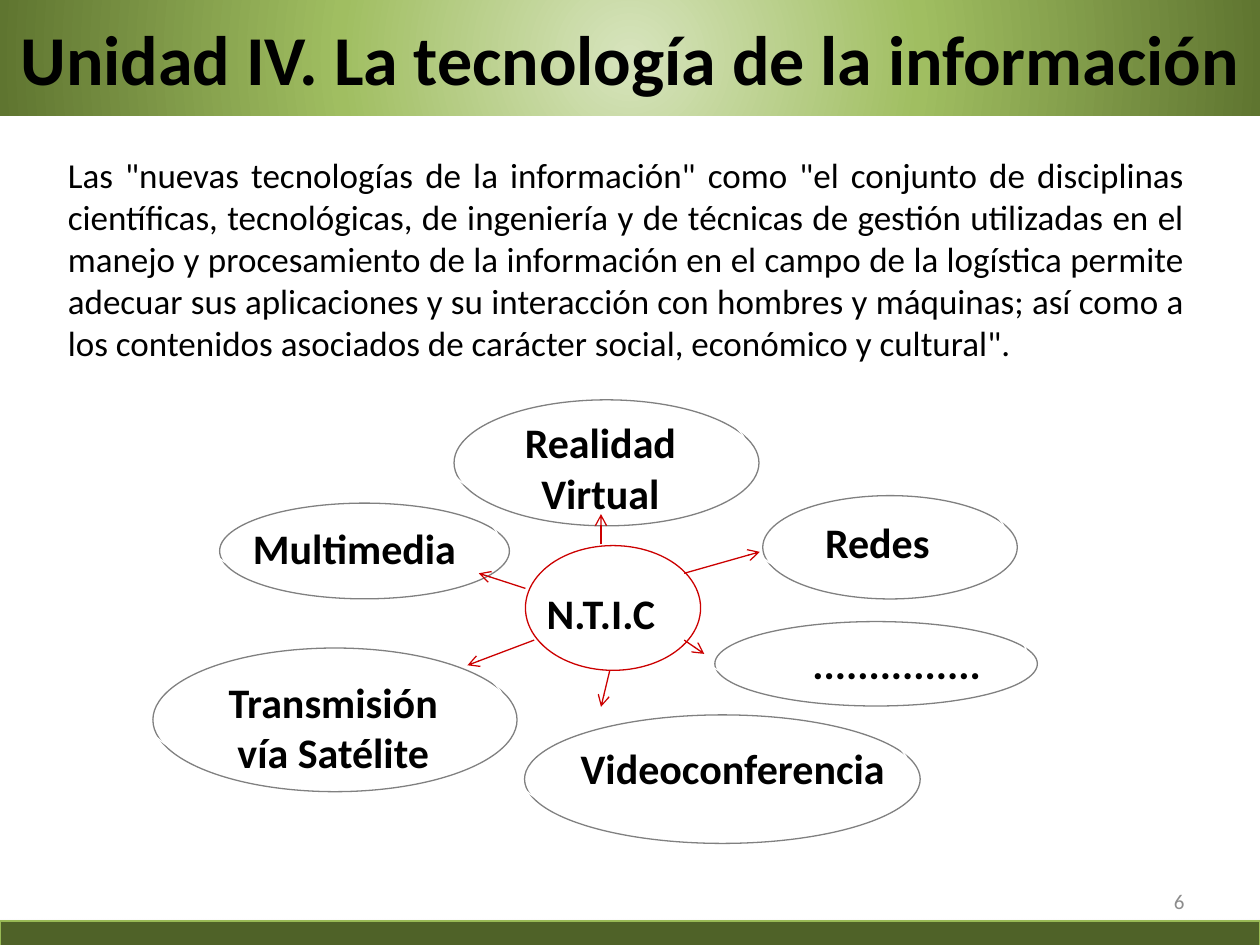
from pptx import Presentation
from pptx.dml.color import RGBColor
from pptx.enum.shapes import MSO_CONNECTOR, MSO_SHAPE
from pptx.enum.text import MSO_ANCHOR, MSO_AUTO_SIZE, PP_ALIGN
from pptx.oxml import parse_xml
from pptx.oxml.ns import nsdecls
from pptx.util import Inches, Pt

LEFT, MID, RIGHT, FULL = PP_ALIGN.LEFT, PP_ALIGN.CENTER, PP_ALIGN.RIGHT, PP_ALIGN.JUSTIFY
TOP, MIDDLE = MSO_ANCHOR.TOP, MSO_ANCHOR.MIDDLE
OVAL, RECT = MSO_SHAPE.OVAL, MSO_SHAPE.RECTANGLE
STRAIGHT = MSO_CONNECTOR.STRAIGHT

THEME = {
    "font": "Calibri", "ink": "000000", "page": "8C8C8C", "red": "CC0000",
    "white": "FFFFFF", "bar": "4F6228", "edge": "98B955", "line": 0.75,
    "title": 40, "body": 20, "label": 24, "small": 12,
    "fade": [(0, "D7E4BD"), (46, "A0BE61"), (100, "5F7530")],
}

# Grid of 100 columns by 75 rows
prs = Presentation()
prs.slide_width, prs.slide_height = Inches(10), Inches(7.5)
COL, ROW = prs.slide_width / 100, prs.slide_height / 75
slide = prs.slides.add_slide(prs.slide_layouts[5])
shapes = slide.shapes


def place(x, y, w, h):
    return round(x * COL), round(y * ROW), round(w * COL), round(h * ROW)


def write(shape, text, size, align=LEFT, anchor=TOP, bold=False, color="ink"):
    frame = shape.text_frame
    frame.word_wrap = True
    frame.auto_size = MSO_AUTO_SIZE.NONE
    frame.vertical_anchor = anchor
    para = frame.paragraphs[0]
    para.alignment = align
    run = para.add_run()
    run.text = text
    run.font.name = THEME["font"]
    run.font.size = Pt(THEME[size])
    run.font.bold = bold
    run.font.color.rgb = RGBColor.from_string(THEME[color])


# Title band with a radial fade
title = shapes.title
title.left, title.top, title.width, title.height = place(0, -0.1, 100, 9.3)
stops = "".join(
    f'<a:gs pos="{pos * 1000}"><a:srgbClr val="{tint}"/></a:gs>'
    for pos, tint in THEME["fade"])
title.element.spPr.append(parse_xml(
    f'<a:gradFill {nsdecls("a")} rotWithShape="1"><a:gsLst>{stops}</a:gsLst>'
    '<a:path path="circle"><a:fillToRect l="50000" t="50000" r="50000" b="50000"/>'
    '</a:path></a:gradFill>'))
write(title, "Unidad IV. La tecnología de la información", "title", MID, MIDDLE, True)

# Definition and page number
body = shapes.add_textbox(*place(4.4, 11.7, 90.6, 17.8))
write(body, 'Las "nuevas tecnologías de la información" como "el conjunto de '
      'disciplinas científicas, tecnológicas, de ingeniería y de técnicas de '
      'gestión utilizadas en el manejo y procesamiento de la información en el '
      'campo de la logística permite adecuar sus aplicaciones y su interacción '
      'con hombres y máquinas; así como a los contenidos asociados de carácter '
      'social, económico y cultural".', "body", FULL)
page = shapes.add_textbox(*place(71.7, 69.5, 23.3, 4))
write(page, "6", "small", RIGHT, MIDDLE, color="page")

# Outlined forms: kind, place, fill, line, shadow (tint, alpha, blur, gap, angle)
soft = ("808080", 100, 0, 8.5, 45)
forms = [
    (RECT, (0, 73.1, 100, 2.2), "bar", "edge", ("000000", 35, 3.1, 1.8, 90)),
    (OVAL, (35.2, 30.9, 24.2, 10), None, "white", soft),
    (OVAL, (16.6, 39.1, 23, 7.6), None, "white", soft),
    (OVAL, (11.3, 50.6, 28.9, 11.4), None, "white", soft),
    (OVAL, (40.8, 55.9, 31.4, 10.2), None, "white", soft),
    (OVAL, (41.7, 43.3, 13.9, 9.9), None, "red", None),
    (OVAL, (55.9, 48.5, 25.6, 6.7), None, "white", soft),
    (OVAL, (59.7, 38.5, 20.2, 8.2), None, "white", soft),
]
for kind, box, fill, line, shade in forms:
    form = shapes.add_shape(kind, *place(*box))
    if fill:
        form.fill.solid()
        form.fill.fore_color.rgb = RGBColor.from_string(THEME[fill])
    else:
        form.fill.background()
    form.line.color.rgb = RGBColor.from_string(THEME[line])
    form.line.width = Pt(THEME["line"])
    form.shadow.inherit = False
    if shade:
        tint, alpha, blur, gap, angle = shade
        form.element.spPr.effectLst.append(parse_xml(
            f'<a:outerShdw {nsdecls("a")} blurRad="{Pt(blur)}" dist="{Pt(gap)}" '
            f'dir="{angle * 60000}" algn="ctr" rotWithShape="0">'
            f'<a:srgbClr val="{tint}"><a:alpha val="{alpha * 1000}"/></a:srgbClr>'
            '</a:outerShdw>'))

# Topic labels
labels = [
    ("Realidad Virtual", (37.7, 32.6, 19.9, 7.6), MID),
    ("Multimedia", (19.1, 41, 18.6, 3.8), LEFT),
    ("Transmisión vía Satélite", (15.2, 53.2, 22.5, 7.6), MID),
    ("Videoconferencia", (45.1, 58.4, 27.2, 5.1), LEFT),
    ("N.T.I.C", (42.4, 46.1, 13.9, 7), LEFT),
    ("...............", (63.5, 50.1, 16.7, 3.6), LEFT),
    ("Redes", (64.5, 40.5, 13.7, 4.1), LEFT),
]
for text, box, align in labels:
    write(shapes.add_textbox(*place(*box)), text, "label", align, bold=True)

# Arrows from the centre to the topics
arrows = [
    (42.4, 50.8, 37.1, 52.8), (48.4, 53.2, 47.7, 56.1),
    (54.3, 50.8, 55.9, 51.9), (54.3, 45.5, 60.3, 43.8),
    (47.7, 43.2, 47.7, 40.8), (41.7, 46.7, 38, 45.5),
]
for ends in arrows:
    arrow = shapes.add_connector(STRAIGHT, *place(*ends))
    arrow.line.color.rgb = RGBColor.from_string(THEME["red"])
    arrow.line.width = Pt(THEME["line"])
    props = arrow.element.spPr
    props.ln.append(parse_xml(f'<a:tailEnd {nsdecls("a")} type="arrow"/>'))
    props.append(parse_xml(f'<a:effectLst {nsdecls("a")}/>'))

prs.save("out.pptx")
